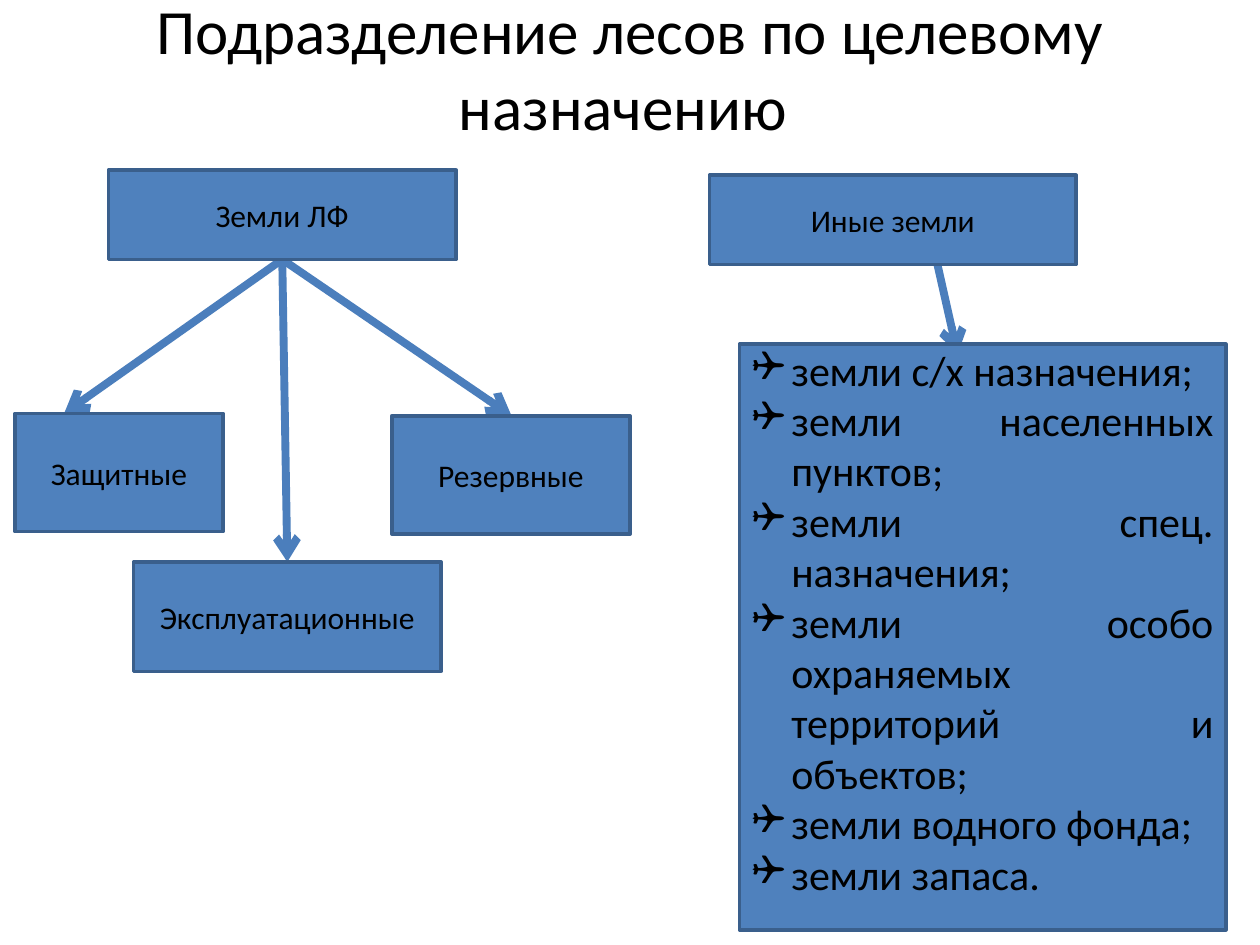
import pptx
import pptx.util
import pptx.dml.color
import pptx.enum.shapes
import pptx.enum.text
import pptx.oxml
import pptx.oxml.ns

Pt = pptx.util.Pt
ALIGN = pptx.enum.text.PP_ALIGN
ANCHOR = pptx.enum.text.MSO_ANCHOR

# Content: boxes as text, left, top, width, height in points
TITLE = "Подразделение лесов по целевому назначению "
BOXES = {
    "fund": ("Земли ЛФ", 61.9, 97.2, 198.7, 51.1),
    "other": ("Иные земли", 405.4, 100.1, 209.5, 51.1),
    "protective": ("Защитные", 8.6, 236.2, 118.8, 67.7),
    "production": ("Эксплуатационные", 76.3, 321.1, 175.7, 62.6),
    "reserve": ("Резервные", 223.9, 237.6, 136.1, 67.7),
}
LAND_TYPES = [
    "земли с/х назначения;",
    "земли населенных пунктов;",
    "земли спец. назначения;",
    "земли особо охраняемых территорий и объектов;",
    "земли водного фонда;",
    "земли запаса.",
]
LIST_PLACE = (422.6, 196.6, 277.9, 334.8)

# Arrows: upper box, start x, end x, end y
ARROWS = [
    ("fund", 161.3, 36.7, 236.2),
    ("fund", 161.3, 164.2, 321.1),
    ("fund", 161.3, 292.3, 237.6),
    ("other", 535.7, 547.2, 202.3),
]

THEME = {
    "font": "Calibri", "title": 36, "label": 18, "list": 24,
    "text": "000000", "fill": "4F81BD", "border": "3A5F8C", "arrow": "4B7EBC",
    "border_width": 2, "arrow_width": 4.5, "indent": 22.5,
}


def color(name):
    return pptx.dml.color.RGBColor.from_string(THEME[name])


def write(para, text, size, align):
    para.alignment = align
    span = para.add_run()
    span.text = text
    span.font.name = THEME["font"]
    span.font.size = Pt(THEME[size])
    span.font.color.rgb = color("text")


def add_box(page, place):
    box = page.shapes.add_shape(
        pptx.enum.shapes.MSO_SHAPE.RECTANGLE, *map(Pt, place))
    box.shadow.inherit = False
    box.fill.solid()
    box.fill.fore_color.rgb = color("fill")
    box.line.color.rgb = color("border")
    box.line.width = Pt(THEME["border_width"])
    box.text_frame.word_wrap = True
    box.text_frame.vertical_anchor = ANCHOR.MIDDLE
    return box


def add_arrow(page, start, end):
    arrow = page.shapes.add_connector(
        pptx.enum.shapes.MSO_CONNECTOR.STRAIGHT, *map(Pt, start + end))
    arrow.line.color.rgb = color("arrow")
    arrow.line.width = Pt(THEME["arrow_width"])
    head = pptx.oxml.ns.qn("a:tailEnd")
    arrow.line._get_or_add_ln().append(
        pptx.oxml.xmlchemy.OxmlElement("a:tailEnd"))
    arrow.line._get_or_add_ln().find(head).set("type", "arrow")
    arrow._element.spPr.append(pptx.oxml.xmlchemy.OxmlElement("a:effectLst"))


def add_bullet(para):
    properties = para._p.get_or_add_pPr()
    properties.set("marL", str(Pt(THEME["indent"])))
    properties.set("indent", str(-Pt(THEME["indent"])))
    for tag, key, value in (("a:buFont", "typeface", "Wingdings"),
                            ("a:buChar", "char", "❑")):
        element = pptx.oxml.xmlchemy.OxmlElement(tag)
        element.set(key, value)
        properties.append(element)


def main():
    deck = pptx.Presentation()
    deck.slide_width, deck.slide_height = Pt(720), Pt(540)
    page = deck.slides.add_slide(deck.slide_layouts[6])

    # Title
    title = page.shapes.add_textbox(Pt(0), Pt(0), Pt(720), Pt(77)).text_frame
    title.word_wrap = True
    title.vertical_anchor = ANCHOR.MIDDLE
    write(title.paragraphs[0], TITLE, "title", ALIGN.CENTER)

    # Arrows lie behind the boxes they point to
    for name, start_x, end_x, end_y in ARROWS:
        _, _, top, _, height = BOXES[name]
        add_arrow(page, (start_x, top + height), (end_x, end_y))

    # Category boxes
    for text, *place in BOXES.values():
        box = add_box(page, place)
        write(box.text_frame.paragraphs[0], text, "label", ALIGN.CENTER)

    # List of other lands
    frame = add_box(page, LIST_PLACE).text_frame
    frame.vertical_anchor = ANCHOR.TOP
    frame.margin_top = Pt(0)
    for index, text in enumerate(LAND_TYPES):
        para = frame.add_paragraph() if index else frame.paragraphs[0]
        add_bullet(para)
        write(para, text, "list", ALIGN.JUSTIFY)

    deck.save("out.pptx")


if __name__ == "__main__":
    main()
